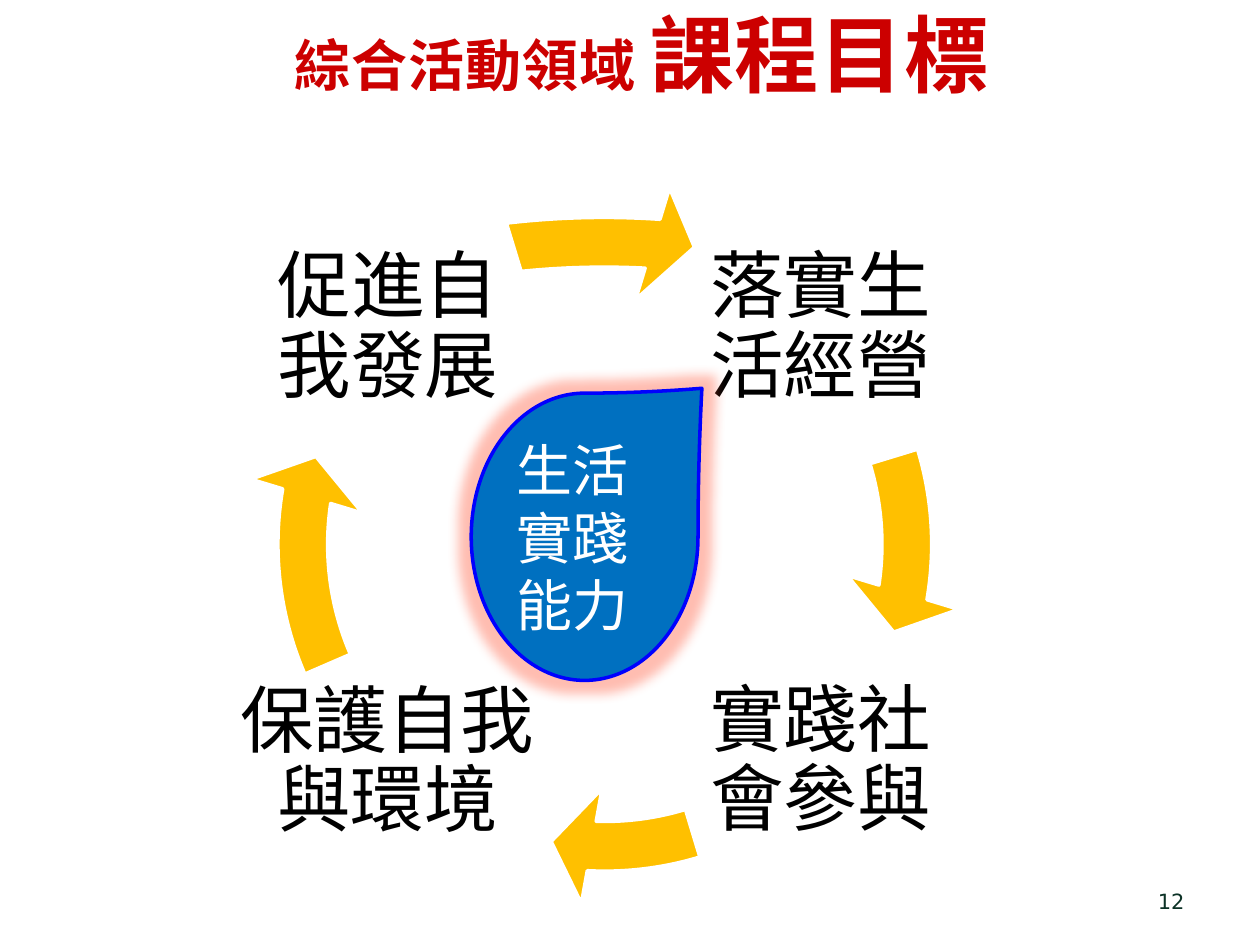
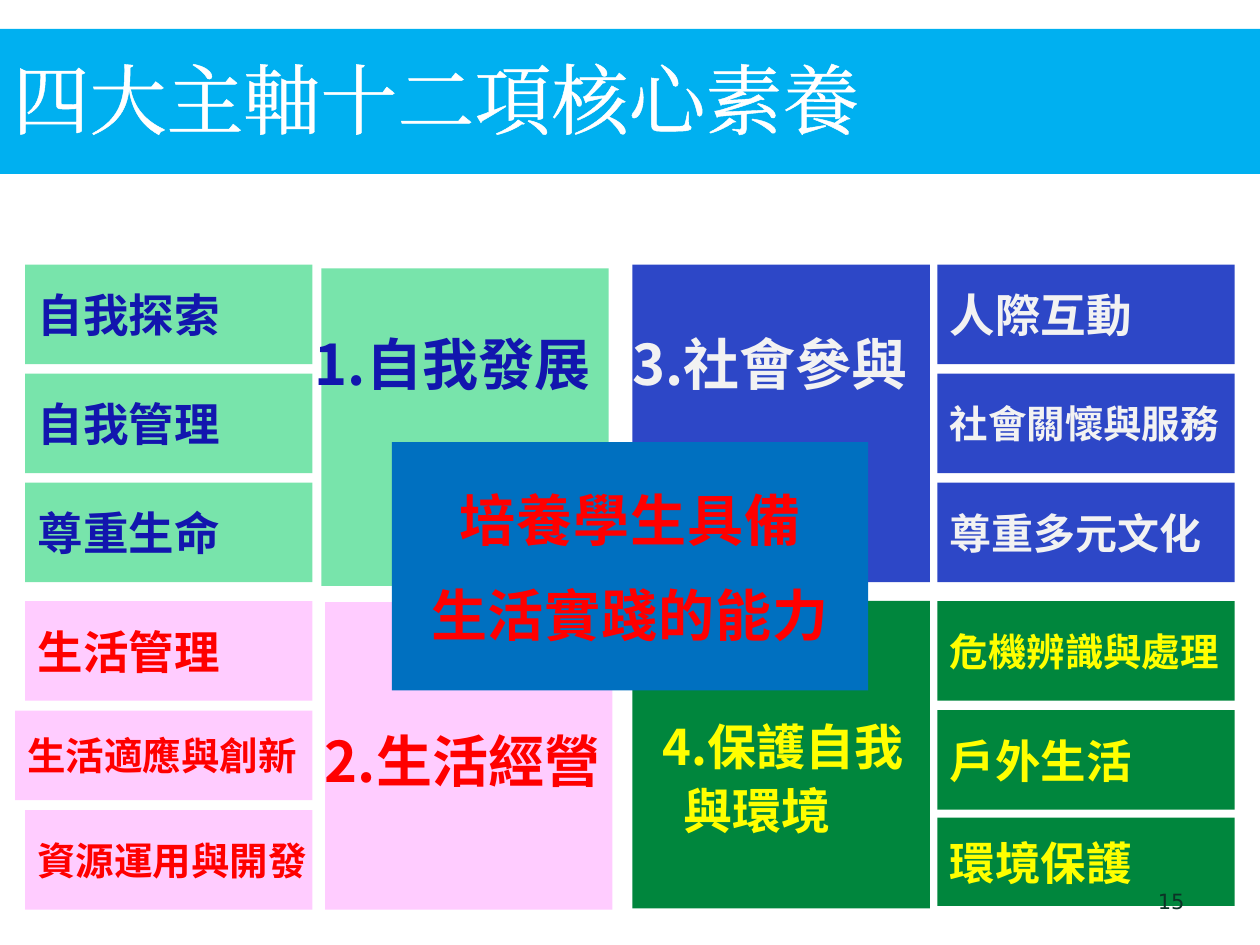
"""Build two slides on the goals and core competencies of integrative activities."""
from pptx import Presentation
from pptx.dml.color import RGBColor
from pptx.enum.shapes import MSO_SHAPE as SHAPE
from pptx.enum.text import MSO_ANCHOR as ANCHOR, MSO_AUTO_SIZE as AUTO, PP_ALIGN as ALIGN
from pptx.oxml.ns import qn
from pptx.oxml.xmlchemy import OxmlElement
from pptx.util import Inches, Pt
from lxml import etree

C = {
    "white": "FFFFFF", "black": "000000", "title": "CC0000", "number": "0C3226",
    "arrow": "FFC000", "core": "0070C0", "edge": "0000FF", "glow": "FF5A3C",
    "band": "00B0F0", "mint": "78E4AB", "navy": "1216AE", "pink": "FFCCFF",
    "red": "FF0000", "blue": "2D47C7", "pale": "F2F2F2", "green": "00863D",
    "yellow": "FFFF00",
}
CJK = "Noto Sans CJK SC"


def add_shape(s, kind, at, fill, line=None):
    sp = s.shapes.add_shape(kind, *map(Inches, at))
    sp.shadow.inherit = False
    sp.fill.solid()
    sp.fill.fore_color.rgb = RGBColor.from_string(C[fill])
    if line:
        sp.line.color.rgb = RGBColor.from_string(C[line])
        sp.line.width = Pt(2)
    else:
        sp.line.fill.background()
    return sp


def write(sp, lines, size, color, bold=False, align=ALIGN.LEFT, anchor=ANCHOR.TOP,
          wrap=True, font=CJK, lead=1.2, before=0, spacing=0):
    tf = sp.text_frame
    tf.text = lines
    tf.auto_size = AUTO.NONE
    tf.word_wrap = wrap
    tf.vertical_anchor = anchor
    for i, p in enumerate(tf.paragraphs):
        p.alignment = align
        p.line_spacing = Pt(size * lead)
        p.space_before = Pt(before if i else 0)
        p.font.size = Pt(size)
        p.font.bold = bold
        p.font.name = font
        p.font.color.rgb = RGBColor.from_string(C[color])
        props = p._p.pPr.find(qn("a:defRPr"))
        etree.SubElement(props, qn("a:ea")).set("typeface", font)
        if spacing:
            props.set("spc", str(spacing))
    return tf


prs = Presentation()
prs.slide_width, prs.slide_height = Inches(10), Inches(7.5)
slides = []
for number, at in (("12", (2.24, -0.03, 5.98, 0.91)), ("15", (0, 0.36, 8.78, 0.84))):
    s = prs.slides.add_slide(prs.slide_layouts[5])
    t = s.shapes.title
    t.left, t.top, t.width, t.height = map(Inches, at)
    slides.append(s)

s = slides[0]
tf = write(s.shapes.title, "綜合活動領域 ", 48, "title", True, spacing=50)
p = tf.paragraphs[0]
p.runs[0].font.size = Pt(32)
r = p.add_run()
r.text = "課程目標"
r.font.size = Pt(48)

goals = [
    ("落實生活經營", (5.5, 1.59, 2.02, 2.02), 5.497, 205.85),
    ("實踐社會參與", (5.5, 5.03, 2.02, 2.02), 55.487, 43.85),
    ("保護自我與環境", (1.79, 5.29, 2.57, 1.51), 113.497, 93.963),
    ("促進自我發展", (2.07, 1.59, 2.02, 2.02), 167.497, 151.85),
]
for goal, at, end, start in goals:
    sp = s.shapes.add_textbox(*map(Inches, at))
    tf = write(sp, goal, 42, "black", align=ALIGN.CENTER, anchor=ANCHOR.MIDDLE, lead=1.08)
    tf.margin_left = tf.margin_right = tf.margin_top = tf.margin_bottom = Inches(0.06)
    ring = (0.36, 1.46, 8.87, 5.72) if goal == "促進自我發展" else (1.94, 1.46, 5.72, 5.72)
    sp = add_shape(s, SHAPE.CIRCULAR_ARROW, ring, "arrow", "white")
    for i, value in enumerate((0.069, 4.653, end, start, 0.081)):
        sp.adjustments[i] = value

drop = add_shape(s, SHAPE.TEAR, (3.74, 3.12, 1.8, 2.28), "core", "edge")
drop.adjustments[0] = 1.034
write(drop, "生活實踐能力", 32, "white", anchor=ANCHOR.MIDDLE)
glow = etree.SubElement(drop.element.spPr.find(qn("a:effectLst")), qn("a:glow"))
glow.set("rad", str(Inches(0.18)))
tint = etree.SubElement(glow, qn("a:srgbClr"))
tint.set("val", C["glow"])
etree.SubElement(tint, qn("a:alpha")).set("val", "40000")

s = slides[1]
add_shape(s, SHAPE.RECTANGLE, (0, 0.23, 10, 1.15), "band")
title = s.shapes.title
tf = write(title, "四大主軸十二項核心素養", 44, "white", font="Times New Roman")
outline = OxmlElement("a:ln")
outline.set("w", str(Pt(1.45)))
ink = etree.SubElement(etree.SubElement(outline, qn("a:solidFill")), qn("a:srgbClr"))
ink.set("val", C["white"])
tf.paragraphs[0].runs[0]._r.get_or_add_rPr().insert(0, outline)
title.element.getparent().append(title.element)

axes = [
    ("1.自我發展", 32, (2.4, 2.57, 2.6, 0.63), (2.55, 2.13, 2.28, 2.52), "mint", "navy"),
    ("4.保護自我\n與環境", 28, (5.16, 5.64, 2.28, 1.09), (5.02, 4.77, 2.36, 2.44), "green", "yellow"),
    ("2.生活經營", 32, (2.48, 5.72, 2.44, 0.63), (2.58, 4.78, 2.28, 2.44), "pink", "red"),
    ("3.社會參與", 32, (4.92, 2.57, 2.52, 0.63), (5.02, 2.1, 2.36, 2.52), "blue", "pale"),
]
for axis, size, at, block, fill, color in axes:
    add_shape(s, SHAPE.RECTANGLE, block, fill)

center = add_shape(s, SHAPE.RECTANGLE, (3.11, 3.51, 3.78, 1.97), "core")
write(center, "培養學生具備\n生活實踐的能力", 32, "red", True, ALIGN.CENTER, ANCHOR.MIDDLE,
      wrap=False, before=16, spacing=50)

for axis, size, at, block, fill, color in axes:
    tf = write(s.shapes.add_textbox(*map(Inches, at)), axis, size, color, True, before=3)
    for p in tf.paragraphs[1:]:
        p._p.pPr.set("marL", str(Inches(0.17)))

groups = [
    (0.2, 2.28, 2.1, "mint", "navy", [("自我探索", 26), ("自我管理", 26), ("尊重生命", 26)]),
    (7.44, 2.36, 2.1, "blue", "pale", [("人際互動", 26), ("社會關懷與服務", 22), ("尊重多元文化", 24)]),
    (0.2, 2.28, 4.77, "pink", "red", [("生活管理", 26), ("生活適應與創新", 22), ("資源運用與開發", 22)]),
    (7.44, 2.36, 4.77, "green", "yellow", [("危機辨識與處理", 22), ("戶外生活", 26), ("環境保護", 26)]),
]
special = {"生活適應與創新": (0.12, 5.64, 2.36, 0.71), "資源運用與開發": (0.2, 6.43, 2.28, 0.79),
           "環境保護": (7.44, 6.49, 2.36, 0.7)}
for left, width, top, fill, color, skills in groups:
    for i, (skill, size) in enumerate(skills):
        at = special.get(skill, (left, top + i * 0.865, width, 0.79))
        sp = add_shape(s, SHAPE.RECTANGLE, at, fill)
        write(sp, skill, size, color, True, anchor=ANCHOR.MIDDLE, wrap=False)

for s, number in zip(slides, ("12", "15")):
    sp = s.shapes.add_textbox(*map(Inches, (7.17, 6.95, 2.33, 0.4)))
    write(sp, number, 12, "number", align=ALIGN.RIGHT, anchor=ANCHOR.MIDDLE, font="DejaVu Sans")

prs.save("out.pptx")
